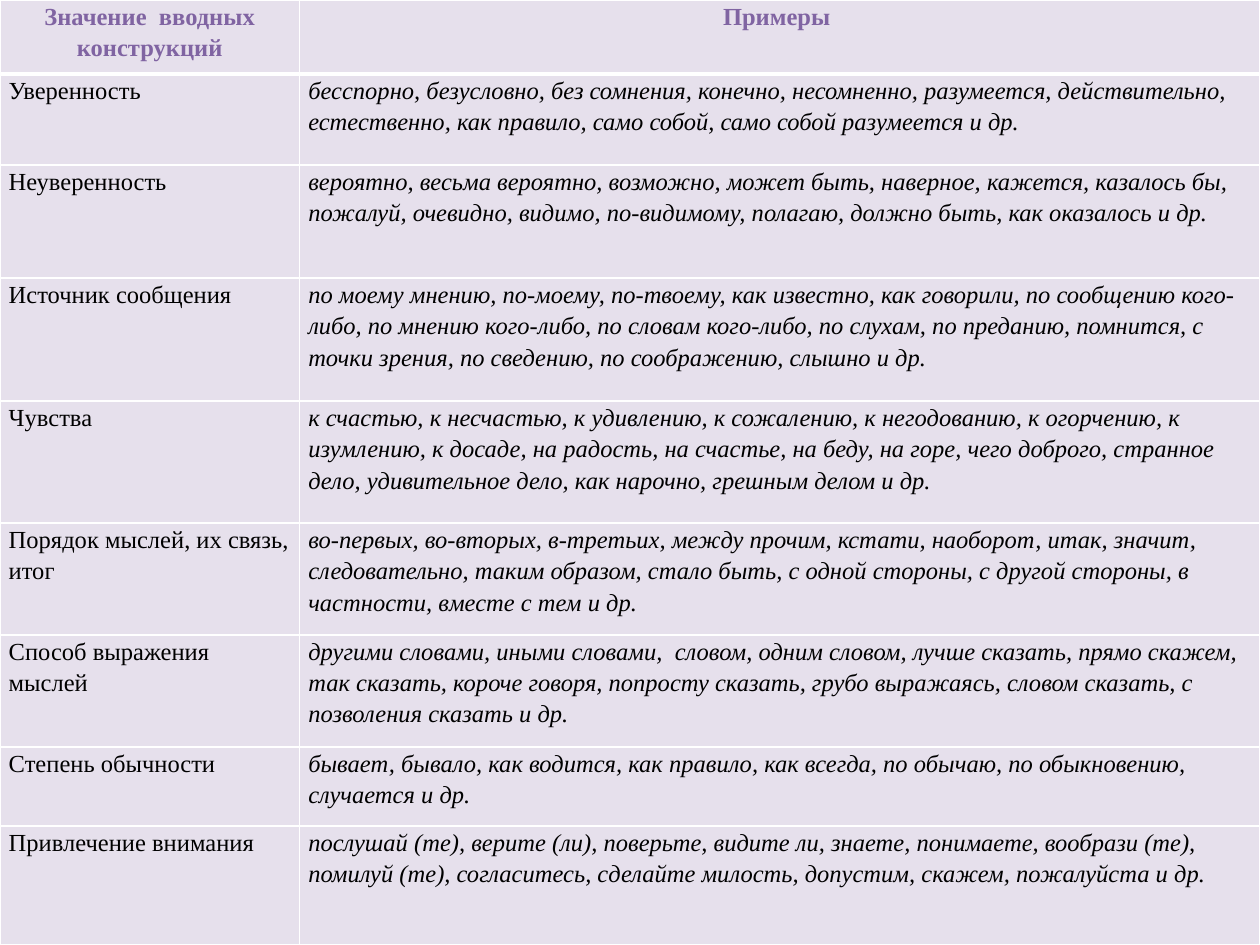
import lxml.etree
import pptx
import pptx.dml.color
import pptx.enum.text
import pptx.oxml
import pptx.oxml.ns
import pptx.util

Pt = pptx.util.Pt
FONT = "Times New Roman"
WHITE, LILAC, PURPLE, BLACK = "FFFFFF", "E6E0EC", "8064A2", "000000"


def color(value):
    return pptx.dml.color.RGBColor.from_string(value)


def add_borders(cell, widths):
    properties = cell._tc.get_or_add_tcPr()
    for index, (side, width) in enumerate(widths.items()):
        line = pptx.oxml.parse_xml(
            f'<a:ln{side} {pptx.oxml.ns.nsdecls("a")} w="{Pt(width)}">'
            f'<a:solidFill><a:srgbClr val="{WHITE}"/></a:solidFill></a:ln{side}>'
        )
        properties.insert(index, line)


rows = [
    (42.3, "Значение  вводных конструкций", "Примеры "),
    (52, "Уверенность",
     "бесспорно, безусловно, без сомнения, конечно, несомненно, разумеется, действительно, "
     "естественно, как правило, само собой, само собой разумеется и др."),
    (64.6, "Неуверенность",
     "вероятно, весьма вероятно, возможно, может быть, наверное, кажется, казалось бы, "
     "пожалуй, очевидно, видимо, по-видимому, полагаю, должно быть, как оказалось и др."),
    (70.3, "Источник сообщения",
     "по моему мнению, по-моему, по-твоему, как известно, как говорили, по сообщению "
     "кого-либо, по мнению кого-либо, по словам кого-либо, по слухам, по преданию, "
     "помнится, с точки зрения, по сведению, по соображению, слышно и др."),
    (69.7, "Чувства",
     "к счастью, к несчастью, к удивлению, к сожалению, к негодованию, к огорчению, "
     "к изумлению, к досаде, на радость, на счастье, на беду, на горе, чего доброго, "
     "странное дело, удивительное дело, как нарочно, грешным делом и др."),
    (64, "Порядок мыслей, их связь, итог",
     "во-первых, во-вторых, в-третьих, между прочим, кстати, наоборот, итак, значит, "
     "следовательно, таким образом, стало быть, с одной стороны, с другой стороны, "
     "в частности, вместе с тем и др."),
    (64, "Способ выражения мыслей",
     "другими словами, иными словами,  словом, одним словом, лучше сказать, прямо скажем, "
     "так сказать, короче говоря, попросту сказать, грубо выражаясь, словом сказать, "
     "с позволения сказать и др."),
    (45.1, "Степень обычности",
     "бывает, бывало, как водится, как правило, как всегда, по обычаю, по обыкновению, "
     "случается и др."),
    (68, "Привлечение внимания",
     "послушай (те), верите (ли), поверьте, видите ли, знаете, понимаете, вообрази (те), "
     "помилуй (те), согласитесь, сделайте милость, допустим, скажем, пожалуйста и др."),
]

deck = pptx.Presentation()
deck.slide_width, deck.slide_height = Pt(720), Pt(540)
page = deck.slides.add_slide(deck.slide_layouts[6])

table = page.shapes.add_table(len(rows), 2, Pt(0), Pt(0), Pt(720), Pt(540)).table
table.horz_banding = False
for column, width in zip(table.columns, (171.2, 548.8)):
    column.width = Pt(width)

for row_index, (height, *texts) in enumerate(rows):
    table.rows[row_index].height = Pt(height)
    header = row_index == 0
    for column_index, text in enumerate(texts):
        cell = table.cell(row_index, column_index)
        cell.margin_left = cell.margin_right = Pt(5)
        cell.margin_top = cell.margin_bottom = Pt(0)
        cell.fill.solid()
        cell.fill.fore_color.rgb = color(LILAC)
        add_borders(cell, {"L": 1, "R": 1, "T": 3 if row_index == 1 else 1, "B": 3 if header else 1})
        cell.text_frame.text = text
        para = cell.text_frame.paragraphs[0]
        para.line_spacing = 1.15
        if header:
            para.alignment = pptx.enum.text.PP_ALIGN.CENTER
        span = para.runs[0]
        span.font.name = FONT
        span.font.size = Pt(14)
        span.font.bold = header
        span.font.italic = column_index == 1 and not header
        span.font.color.rgb = color(PURPLE if header else BLACK)

deck.save("out.pptx")
